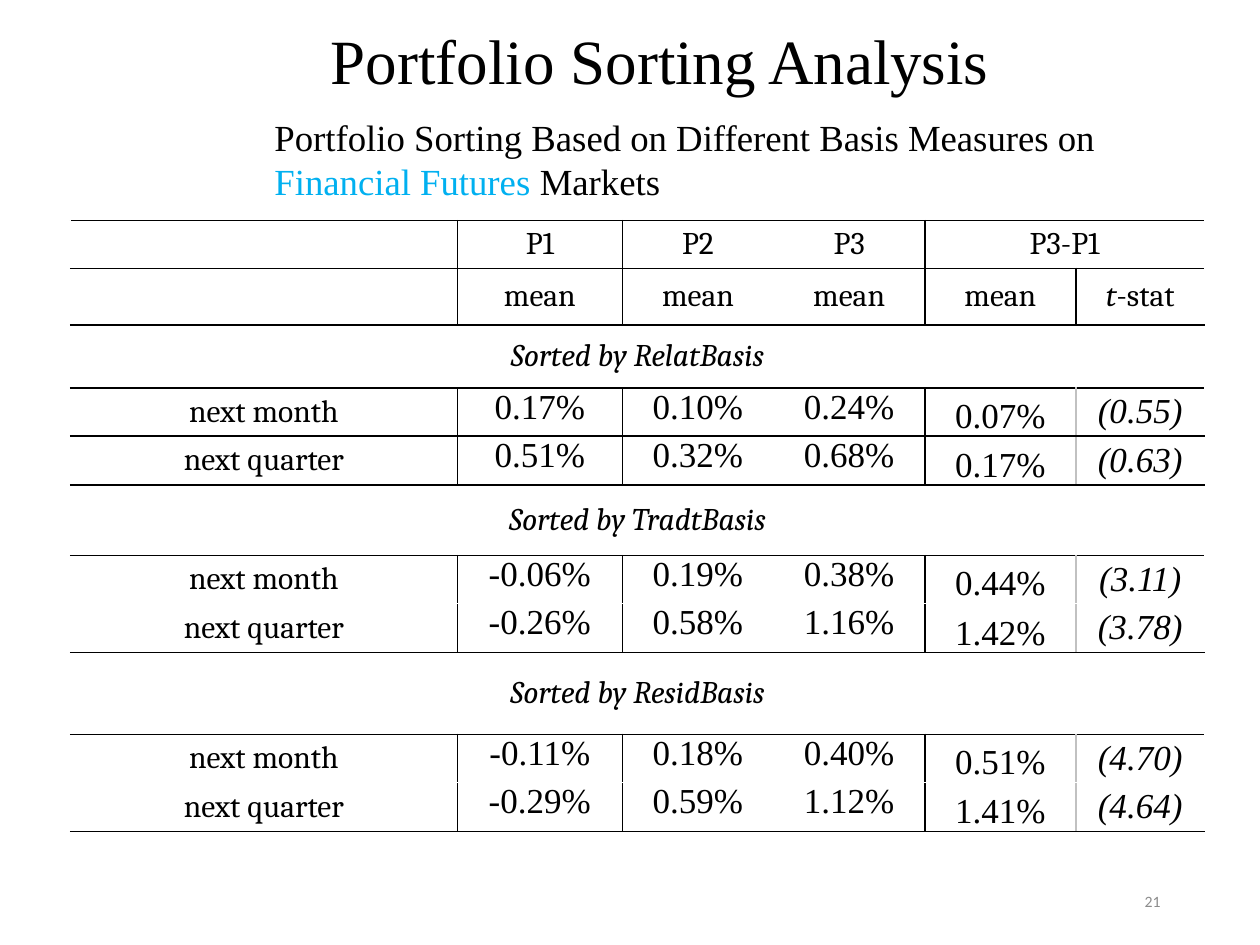
from lxml import etree
from pptx import Presentation
from pptx.dml.color import RGBColor
from pptx.enum.text import MSO_ANCHOR, PP_ALIGN
from pptx.oxml.ns import qn
from pptx.util import Inches, Pt

LEFT, CENTER, RIGHT = PP_ALIGN.LEFT, PP_ALIGN.CENTER, PP_ALIGN.RIGHT
TOP, MIDDLE, BOTTOM = MSO_ANCHOR.TOP, MSO_ANCHOR.MIDDLE, MSO_ANCHOR.BOTTOM
BLACK, WHITE, GREY, BLUE, MUTED = "000000", "FFFFFF", "C1C1C1", "00B0F0", "8C8C8C"
SERIF, LABEL = "Times New Roman", "Cambria"
PLAIN_STYLE = "{2D5ABB26-0587-4C30-8999-92F81FD0307C}"
COLS = [3.07, 1.31, 1.2, 1.2, 1.2, 1.02]
HEADER_HEIGHTS = [0.38, 0.45]
DATA_HEIGHTS = [0.38, 0.39]
ANCHORS = [MIDDLE, TOP, TOP, TOP, BOTTOM, MIDDLE]
HEADERS = [["", "P1", "P2", "P3", "P3-P1"], ["", "mean", "mean", "mean", "mean"]]
GROUPS = [
    ("Sorted by RelatBasis", 0.5, [
        ["next month", "0.17%", "0.10%", "0.24%", "0.07%", "(0.55)"],
        ["next quarter", "0.51%", "0.32%", "0.68%", "0.17%", "(0.63)"]]),
    ("Sorted by TradtBasis", 0.56, [
        ["next month", "-0.06%", "0.19%", "0.38%", "0.44%", "(3.11)"],
        ["next quarter", "-0.26%", "0.58%", "1.16%", "1.42%", "(3.78)"]]),
    ("Sorted by ResidBasis", 0.65, [
        ["next month", "-0.11%", "0.18%", "0.40%", "0.51%", "(4.70)"],
        ["next quarter", "-0.29%", "0.59%", "1.12%", "1.41%", "(4.64)"]]),
]


def rgb(color):
    """Return the colour for a hex string."""
    return RGBColor.from_string(color)


def style_paragraph(p, size, font, color=BLACK, align=LEFT, italic=False):
    """Set the font and alignment of a whole paragraph."""
    p.alignment = align
    p.font.size = Pt(size)
    p.font.name = font
    p.font.italic = italic
    p.font.color.rgb = rgb(color)


def add_text(s, box, runs, size, font, color=BLACK, align=LEFT, anchor=TOP):
    """Add a one-paragraph text box from (text, colour) runs."""
    tf = s.shapes.add_textbox(*map(Inches, box)).text_frame
    tf.word_wrap = True
    tf.vertical_anchor = anchor
    p = tf.paragraphs[0]
    style_paragraph(p, size, font, color, align)
    for text, run_color in runs:
        r = p.add_run()
        r.text = text
        if run_color != color:
            r.font.color.rgb = rgb(run_color)
    return p


def set_borders(cell, **sides):
    """Draw 1 pt borders on the sides L, R, T and B that have a colour."""
    tc_pr = cell._tc.get_or_add_tcPr()
    for side in "LRTB":
        if sides.get(side):
            ln = etree.SubElement(tc_pr, qn(f"a:ln{side}"), w=str(Pt(1)))
            fill = etree.SubElement(ln, qn("a:solidFill"))
            etree.SubElement(fill, qn("a:srgbClr"), val=sides[side])


def fill_cell(cell, text, size=18, font=LABEL, anchor=MIDDLE, italic=False):
    """Write centred text into a cell with tight margins and no fill."""
    cell.margin_left = cell.margin_right = Inches(0.07)
    cell.margin_top = cell.margin_bottom = 0
    cell.vertical_anchor = anchor
    cell.fill.background()
    p = cell.text_frame.paragraphs[0]
    style_paragraph(p, size, font, align=CENTER, italic=italic)
    if text:
        p.add_run().text = text


def border_row(table, row, top=BLACK, bottom=BLACK, stat_line=None):
    """Rule a row whose columns form label, portfolio and spread blocks."""
    lines = [WHITE, BLACK, None, None, BLACK, stat_line, WHITE]
    for col in range(len(COLS)):
        set_borders(table.cell(row, col), L=lines[col], R=lines[col + 1], T=top, B=bottom)


def add_headers(table):
    """Fill the two header rows."""
    for row, texts in enumerate(HEADERS):
        border_row(table, row)
        for col, text in enumerate(texts):
            fill_cell(table.cell(row, col), text)
    table.cell(0, 4).merge(table.cell(0, 5))
    stat = table.cell(1, 5)
    fill_cell(stat, "t")
    p = stat.text_frame.paragraphs[0]
    p.runs[0].font.italic = True
    p.add_run().text = "-stat"


def add_group(table, row, title, data, middle):
    """Fill a spanning group title and its two data rows."""
    for col in range(len(COLS)):
        set_borders(table.cell(row, col), L=WHITE if col == 0 else None,
                    R=WHITE if col == 5 else None, T=BLACK, B=BLACK)
    table.cell(row, 0).merge(table.cell(row, 5))
    fill_cell(table.cell(row, 0), title, italic=True)
    for i, texts in enumerate(data, 1):
        top, bottom = (BLACK, middle) if i == 1 else (middle, BLACK)
        border_row(table, row + i, top, bottom, GREY)
        for col, text in enumerate(texts):
            size, font = (20, SERIF) if col else (18, LABEL)
            fill_cell(table.cell(row + i, col), text, size, font, ANCHORS[col], col == 5)


def add_results_table(s):
    """Add the table of sorted portfolio returns."""
    heights = HEADER_HEIGHTS + [h for _, title_height, _ in GROUPS
                                for h in [title_height] + DATA_HEIGHTS]
    frame = s.shapes.add_table(len(heights), len(COLS), Inches(0.56), Inches(1.75),
                               Inches(sum(COLS)), Inches(sum(heights)))
    table = frame.table
    table.first_row = table.horz_banding = False
    table._tbl.tblPr.find(qn("a:tableStyleId")).text = PLAIN_STYLE
    for column, width in zip(table.columns, COLS):
        column.width = Inches(width)
    for row, height in zip(table.rows, heights):
        row.height = Inches(height)
    add_headers(table)
    for i, (title, _, data) in enumerate(GROUPS):
        add_group(table, len(HEADERS) + 3 * i, title, data, WHITE if i else None)


def main():
    """Build and save the slide."""
    prs = Presentation()
    prs.slide_width, prs.slide_height = Inches(10), Inches(7.5)
    s = prs.slides.add_slide(prs.slide_layouts[6])
    title = add_text(s, (0.84, 0.15, 8.92, 0.71), [("Portfolio Sorting Analysis ", BLACK)],
                     36, SERIF, align=CENTER, anchor=MIDDLE)
    title.line_spacing = 0.9
    add_text(s, (7.06, 6.95, 2.25, 0.4), [("21", MUTED)], 9, "Calibri", MUTED, RIGHT, MIDDLE)
    add_results_table(s)
    add_text(s, (2.08, 0.86, 7.17, 0.81),
             [("Portfolio Sorting Based on Different Basis Measures on ", BLACK),
              ("Financial Futures ", BLUE), ("Markets", BLACK)], 21, SERIF)
    prs.save("out.pptx")


if __name__ == "__main__":
    main()
